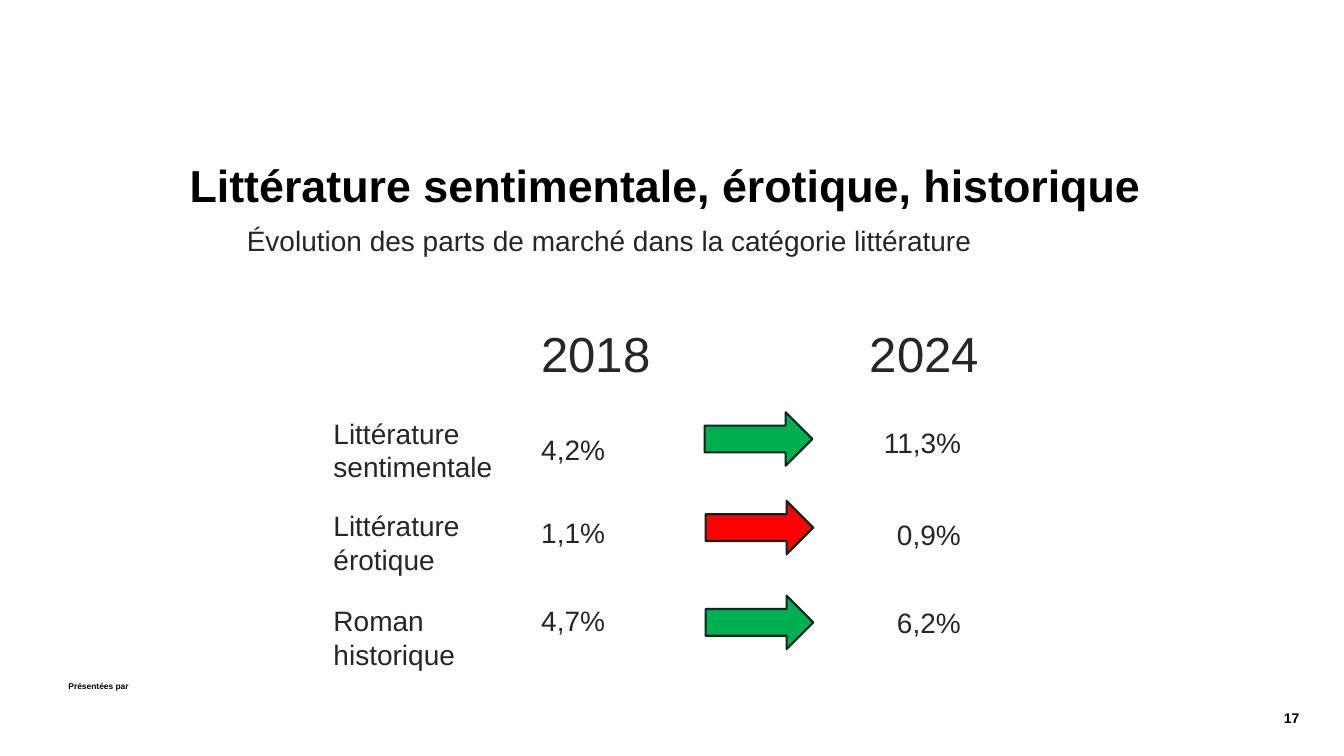
from dataclasses import dataclass

from pptx import Presentation
from pptx import util as u
from pptx.dml import color
from pptx.enum import shapes, text


@dataclass(frozen=True)
class Theme:
    font: str = "Arial"
    black: str = "000000"
    body: str = "262626"
    outline: str = "00271F"
    rise: str = "00B050"
    fall: str = "FF0000"
    title_size: float = 32
    year_size: float = 35.1
    body_size: float = 20
    number_size: float = 10
    footer_size: float = 6


@dataclass(frozen=True)
class Frame:
    left: float
    top: float
    width: float
    height: float

    def lengths(self) -> tuple:
        return tuple(u.Pt(v) for v in (self.left, self.top, self.width, self.height))


@dataclass(frozen=True)
class Genre:
    name: str
    label: Frame
    before: str
    before_top: float
    arrow_left: float
    arrow_top: float
    arrow_fill: str
    after: str
    after_left: float
    after_top: float


THEME = Theme()
BEFORE_LEFT = 379.5
VALUE_SIZE = (85.7, 31.7)
ARROW_SIZE = (77, 38.2)
YEARS = (("2018", BEFORE_LEFT), ("2024", 614.2))
GENRES = (
    Genre("Littérature sentimentale", Frame(231.1, 293.8, 148.3, 60.5), "4,2%", 305.3,
          503.3, 294.5, THEME.rise, "11,3%", 624.2, 300.2),
    Genre("Littérature érotique", Frame(231.1, 360, 148.3, 60.5), "1,1%", 365,
          504, 357.8, THEME.fall, "0,9%", 633.6, 365.8),
    Genre("Roman historique", Frame(231.1, 427.7, 126, 60.5), "4,7%", 427.7,
          504, 425.5, THEME.rise, "6,2%", 633.6, 429.1),
)


def write(box, wording: str, size: float, ink: str, bold: bool = False,
          align=text.PP_ALIGN.LEFT):
    para = box.text_frame.paragraphs[0]
    para.alignment = align
    span = para.add_run()
    span.text = wording
    span.font.name = THEME.font
    span.font.size = u.Pt(size)
    span.font.bold = bold
    span.font.color.rgb = color.RGBColor.from_string(ink)
    return para


def add_text(page, frame: Frame, wording: str, size: float = THEME.body_size,
             ink: str = THEME.body, bold: bool = False,
             align=text.PP_ALIGN.LEFT, wrap: bool = True) -> None:
    box = page.shapes.add_textbox(*frame.lengths())
    box.text_frame.word_wrap = wrap
    write(box, wording, size, ink, bold, align)


def add_title(page, frame: Frame, wording: str) -> None:
    title = page.shapes.title
    title.left, title.top, title.width, title.height = frame.lengths()
    title.text_frame.vertical_anchor = text.MSO_ANCHOR.MIDDLE
    title.text_frame.auto_size = text.MSO_AUTO_SIZE.NONE
    para = write(title, wording, THEME.title_size, THEME.black, True)
    para.line_spacing = 0.9
    para.space_before = u.Pt(0)


def add_arrow(page, frame: Frame, fill: str) -> None:
    arrow = page.shapes.add_shape(shapes.MSO_SHAPE.RIGHT_ARROW, *frame.lengths())
    arrow.shadow.inherit = False
    arrow.fill.solid()
    arrow.fill.fore_color.rgb = color.RGBColor.from_string(fill)
    arrow.line.color.rgb = color.RGBColor.from_string(THEME.outline)
    arrow.line.width = u.Pt(1.5)


def add_genre(page, genre: Genre) -> None:
    add_text(page, genre.label, genre.name)
    add_text(page, Frame(BEFORE_LEFT, genre.before_top, *VALUE_SIZE), genre.before)
    add_arrow(page, Frame(genre.arrow_left, genre.arrow_top, *ARROW_SIZE), genre.arrow_fill)
    add_text(page, Frame(genre.after_left, genre.after_top, *VALUE_SIZE), genre.after)


def main() -> None:
    deck = Presentation()
    deck.slide_width, deck.slide_height = u.Pt(960), u.Pt(540)
    page = deck.slides.add_slide(deck.slide_layouts.get_by_name("Title Only"))
    add_title(page, Frame(128.2, 110.9, 767.5, 46.1),
              "Littérature sentimentale, érotique, historique")
    add_text(page, Frame(169.2, 156.2, 622.1, 60.5),
             "Évolution des parts de marché dans la catégorie littérature")
    for year, left in YEARS:
        add_text(page, Frame(left, 227.5, 95.8, 60.5), year, THEME.year_size)
    for genre in GENRES:
        add_genre(page, genre)
    add_text(page, Frame(41.8, 483.1, 58.3, 14.4), "Présentées par",
             THEME.footer_size, THEME.black, True, wrap=False)
    add_text(page, Frame(772.6, 503.3, 162.7, 19.4), "17",
             THEME.number_size, THEME.black, True, text.PP_ALIGN.RIGHT)
    deck.save("out.pptx")


if __name__ == "__main__":
    main()
